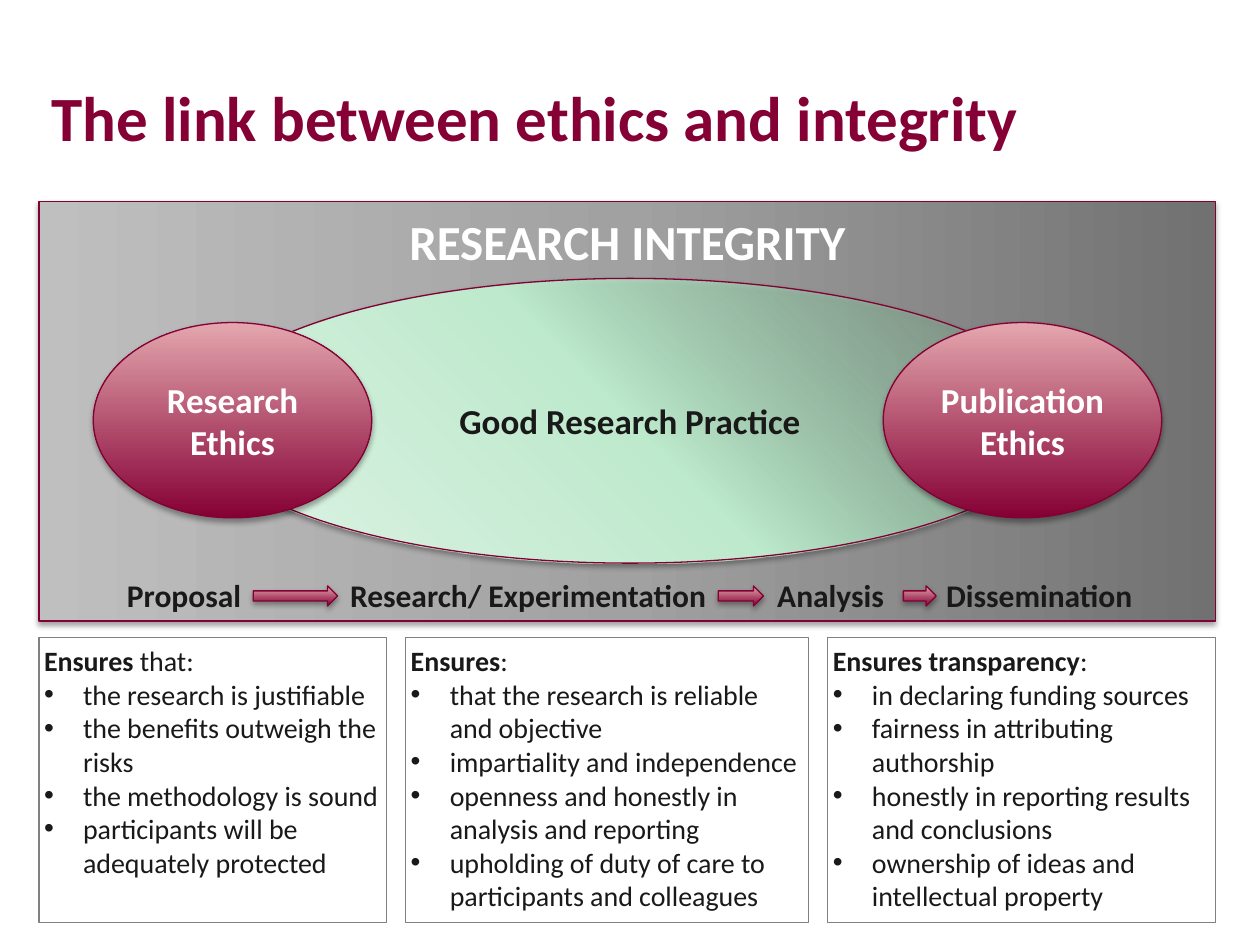
from lxml import etree
from pptx import Presentation
from pptx.dml.color import RGBColor
from pptx.enum.shapes import MSO_SHAPE
from pptx.enum.text import MSO_ANCHOR, PP_ALIGN
from pptx.oxml import parse_xml
from pptx.oxml.ns import nsdecls, qn
from pptx.util import Inches, Pt

RECTANGLE, OVAL, ARROW = MSO_SHAPE.RECTANGLE, MSO_SHAPE.OVAL, MSO_SHAPE.RIGHT_ARROW
TOP, MIDDLE = MSO_ANCHOR.TOP, MSO_ANCHOR.MIDDLE
LEFT, CENTER = PP_ALIGN.LEFT, PP_ALIGN.CENTER

COLORS = {
    "title": "850034", "outline": "820033", "text": "191919",
    "white": "FFFFFF", "border": "808080",
}
# Each gradient: angle in degrees clockwise, then (position, colour, opacity) in percent
GRADIENTS = {
    "grey": (180, [(0, "717171", 100), (50, "A1A1A1", 100), (100, "BFBFBF", 100)]),
    "wine": (270, [(0, "850034", 100), (100, "E4A7AE", 100)]),
    "green": (135, [(0, "91DEAD", 0), (50, "BDE9CC", 100), (100, "DFF3E6", 100)]),
}
INDENT = Inches(0.31)
GAP = 0.15

COLUMNS = [
    (2.76, "Ensures", " that:", [
        "the research is justifiable",
        "the benefits outweigh the risks",
        "the methodology is sound",
        "participants will be adequately protected"]),
    (3.2, "Ensures", ":", [
        "that the research is reliable and objective",
        "impartiality and independence",
        "openness and honestly in analysis and reporting",
        "upholding of duty of care to participants and colleagues"]),
    (3.08, "Ensures transparency", ":", [
        "in declaring funding sources",
        "fairness in attributing authorship",
        "honestly in reporting results and conclusions",
        "ownership of ideas and intellectual property"]),
]
# Left offset and width inside the panel
STAGES = [
    ("Proposal", 0.6, 1.17), ("Research/ Experimentation", 2.37, 3.24),
    ("Analysis", 5.76, 1.12), ("Dissemination", 7.1, 1.91),
]
ARROWS = [(1.7, 0.67), (5.39, 0.36), (6.86, 0.26)]


def inches(box):
    return [Inches(value) for value in box]


def add_span(para, text, size, color, bold=True):
    span = para.add_run()
    span.text = text
    values = {"name": "Calibri", "size": Pt(size), "bold": bold}
    for name, value in values.items():
        setattr(span.font, name, value)
    span.font.color.rgb = RGBColor.from_string(COLORS[color])


def format_frame(frame, anchor, side=0.1, wrap=True):
    values = {
        "word_wrap": wrap, "vertical_anchor": anchor,
        "margin_left": Inches(side), "margin_right": Inches(side),
        "margin_top": Inches(0.05), "margin_bottom": Inches(0.05),
    }
    for name, value in values.items():
        setattr(frame, name, value)


def write_line(shape, text, size, color, anchor=TOP, align=LEFT, wrap=True):
    format_frame(shape.text_frame, anchor, wrap=wrap)
    para = shape.text_frame.paragraphs[0]
    para.alignment = align
    add_span(para, text, size, color)


def add_label(page, box, *style, **options):
    write_line(page.shapes.add_textbox(*inches(box)), *style, **options)


def add_outlined(page, kind, box, color):
    shape = page.shapes.add_shape(kind, *inches(box))
    shape.shadow.inherit = False
    shape.line.color.rgb = RGBColor.from_string(COLORS[color])
    shape.line.width = Pt(0.75)
    return shape


def add_glossy(page, kind, box, gradient):
    """Add an outlined shape with a gradient fill and a soft shadow below."""
    shape = add_outlined(page, kind, box, "outline")
    angle, stops = GRADIENTS[gradient]
    stop_xml = "".join(
        f'<a:gs pos="{position * 1000}"><a:srgbClr val="{color}">'
        f'<a:alpha val="{opacity * 1000}"/></a:srgbClr></a:gs>'
        for position, color, opacity in stops)
    fill = parse_xml(
        f'<a:gradFill {nsdecls("a")} rotWithShape="1"><a:gsLst>{stop_xml}</a:gsLst>'
        f'<a:lin ang="{angle * 60000}" scaled="0"/></a:gradFill>')
    properties = shape._element.spPr
    properties.find(qn("a:prstGeom")).addnext(fill)
    effects = properties.find(qn("a:effectLst"))
    effects.append(parse_xml(
        f'<a:outerShdw {nsdecls("a")} blurRad="{Pt(3.1)}" dist="{Pt(1.8)}" '
        'dir="5400000" rotWithShape="0"><a:srgbClr val="000000">'
        '<a:alpha val="35000"/></a:srgbClr></a:outerShdw>'))
    return shape


def add_bullet(para):
    properties = para._p.get_or_add_pPr()
    properties.set("marL", str(INDENT))
    properties.set("indent", str(-INDENT))
    etree.SubElement(properties, qn("a:buFont")).set("typeface", "Arial")
    etree.SubElement(properties, qn("a:buChar")).set("char", "•")


def add_panel(page, box):
    left, top, width, height = box
    add_glossy(page, RECTANGLE, box, "grey")
    add_stages(page, left, top + 2.92)

    practice = add_glossy(page, OVAL, (left + 1.25, top + 0.61, 6.88, 2.26), "green")
    write_line(practice, "Good Research Practice", 20, "text", MIDDLE, CENTER)
    for text, offset in (("Research Ethics", 0.43), ("Publication Ethics", 6.7)):
        oval = add_glossy(page, OVAL, (left + offset, top + 0.96, 2.21, 1.55), "wine")
        write_line(oval, text, 20, "white", MIDDLE, CENTER)

    add_label(page, (left + 2.84, top + 0.03, 3.7, 0.57),
              "RESEARCH INTEGRITY", 28, "white", wrap=False)


def add_stages(page, left, top):
    """Add the row of research stages and the arrows between them."""
    for text, offset, width in STAGES:
        add_label(page, (left + offset, top, width, 0.4), text, 18, "text")
    for offset, width in ARROWS:
        add_glossy(page, ARROW, (left + offset, top + 0.13, width, 0.16), "wine")


def add_columns(page, box):
    left, top, _, height = box
    for width, heading, ending, points in COLUMNS:
        column = add_outlined(page, RECTANGLE, (left, top, width, height), "border")
        column.fill.background()
        frame = column.text_frame
        format_frame(frame, TOP, side=0.04)
        para = frame.paragraphs[0]
        para.alignment = LEFT
        add_span(para, heading, 16, "text")
        add_span(para, ending, 16, "text", bold=False)
        for point in points:
            para = frame.add_paragraph()
            para.alignment = LEFT
            add_bullet(para)
            add_span(para, point, 16, "text", bold=False)
        left += width + GAP


def main():
    deck = Presentation()
    deck.slide_width, deck.slide_height = Inches(10), Inches(7.5)
    page = deck.slides.add_slide(deck.slide_layouts[6])
    add_label(page, (0.31, 0.3, 8.06, 1.25),
              "The link between ethics and integrity", 36, "title", MIDDLE)
    add_panel(page, (0.31, 1.6, 9.34, 3.33))
    add_columns(page, (0.31, 5.06, 9.34, 2.26))
    deck.save("out.pptx")


if __name__ == "__main__":
    main()
